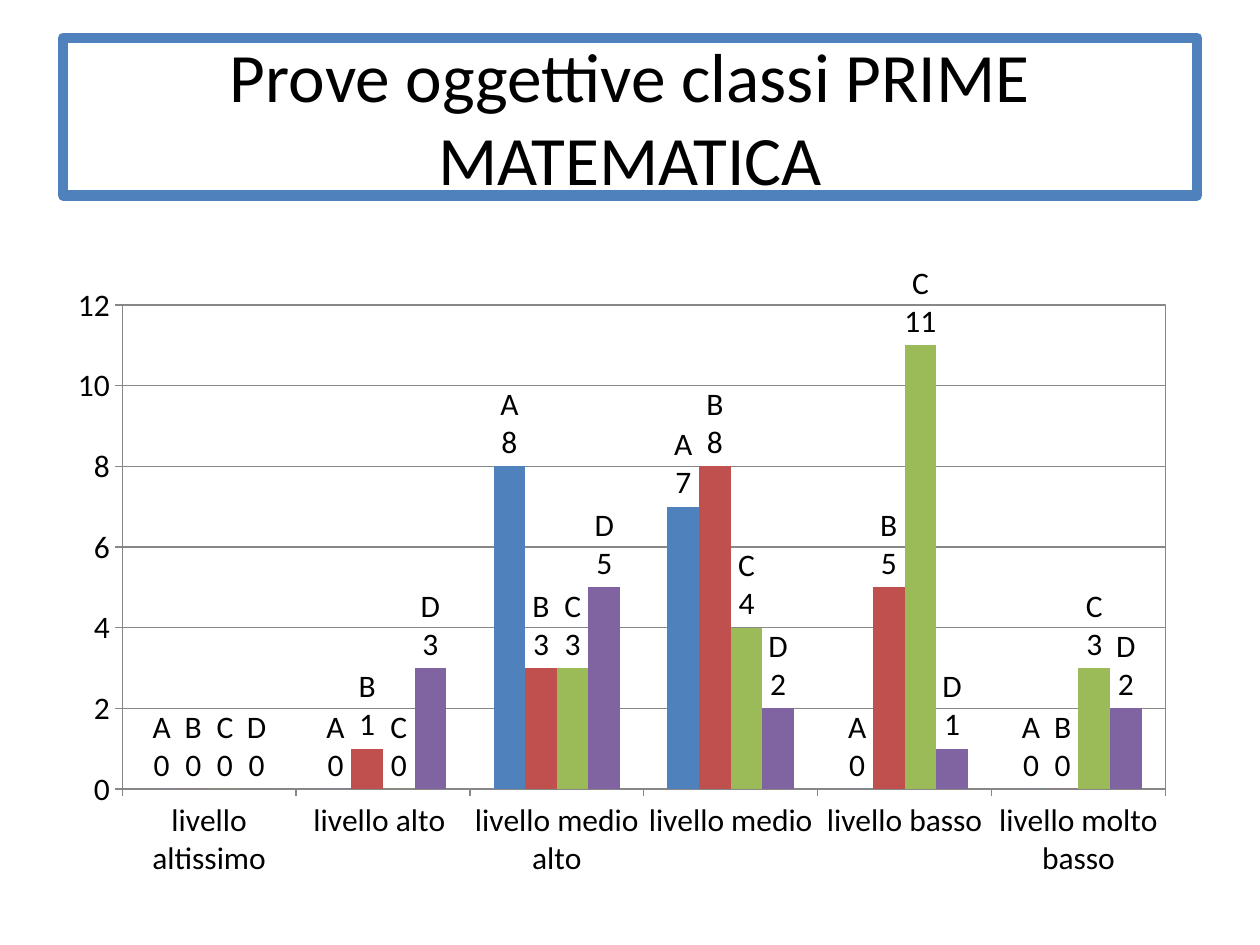
from lxml.etree import SubElement
from pptx import Presentation
from pptx.chart.data import CategoryChartData as ChartData
from pptx.dml.color import RGBColor as RGB
from pptx.enum.chart import XL_CHART_TYPE as ChartType, XL_LABEL_POSITION as LabelPos, XL_TICK_MARK as Tick
from pptx.enum.text import MSO_ANCHOR as Anchor, PP_ALIGN as Align
from pptx.oxml import parse_xml
from pptx.oxml.ns import nsdecls, qn
from pptx.util import Inches, Pt

HEADING = "Prove oggettive classi PRIME\vMATEMATICA"
LEVELS = ["livello altissimo", "livello alto ", "livello medio alto",
          "livello medio", "livello basso", "livello molto basso"]
CLASSES = {
    "A": (0, 0, 8, 7, 0, 0),
    "B": (0, 1, 3, 8, 5, 0),
    "C": (0, 0, 3, 4, 11, 3),
    "D": (0, 3, 5, 2, 1, 2),
}
THEME = {
    "font": "Calibri", "heading_size": 39.6, "chart_size": 18,
    "text": "000000", "frame": "4F81BD", "grid": "878787",
    "classes": ("4F81BD", "C0504D", "9BBB59", "8064A2"),
}
HEADING_BOX = (0.5, 0.3, 9, 1.25)
CHART_BOX = (0.43, 2.1, 9, 4.95)
PLOT_LAYOUT = {"x": 0.06, "y": 0.06, "w": 0.92, "h": 0.78}


def apply(target, values):
    for name, value in values.items():
        setattr(target, name, value)


def style_font(font, size):
    apply(font, {"name": THEME["font"], "size": Pt(size), "bold": False})
    font.color.rgb = RGB.from_string(THEME["text"])


def style_line(line, colour, width):
    line.color.rgb = RGB.from_string(colour)
    line.width = Pt(width)


def add_heading(slide):
    heading = slide.shapes.title
    apply(heading, dict(zip(("left", "top", "width", "height"), map(Inches, HEADING_BOX))))
    style_line(heading.line, THEME["frame"], 6)
    frame = heading.text_frame
    frame.text = HEADING
    apply(frame, {"word_wrap": True, "vertical_anchor": Anchor.MIDDLE})
    paragraph = frame.paragraphs[0]
    paragraph.alignment = Align.CENTER
    for run in paragraph.runs:
        style_font(run.font, THEME["heading_size"])


def frame_plot(chart):
    area = chart._chartSpace.chart.plotArea
    for layout in area.findall(qn("c:layout")):
        area.remove(layout)
    places = "".join(f'<c:{side} val="{share}"/>' for side, share in PLOT_LAYOUT.items())
    area.insert(0, parse_xml(
        f'<c:layout {nsdecls("c")}><c:manualLayout><c:layoutTarget val="inner"/>'
        f'<c:xMode val="edge"/><c:yMode val="edge"/>{places}</c:manualLayout></c:layout>'))
    area.append(parse_xml(
        f'<c:spPr {nsdecls("c", "a")}><a:noFill/><a:ln w="9525"><a:solidFill>'
        f'<a:srgbClr val="{THEME["grid"]}"/></a:solidFill></a:ln></c:spPr>'))


def add_results(slide):
    results = ChartData(number_format="General")
    results.categories = LEVELS
    for name, counts in CLASSES.items():
        results.add_series(name, counts)
    chart = slide.shapes.add_chart(
        ChartType.COLUMN_CLUSTERED, *map(Inches, CHART_BOX), results).chart
    apply(chart, {"has_legend": False, "has_title": False})
    style_font(chart.font, THEME["chart_size"])

    for axis in (chart.category_axis, chart.value_axis):
        apply(axis, {"major_tick_mark": Tick.OUTSIDE, "minor_tick_mark": Tick.NONE})
        style_line(axis.format.line, THEME["grid"], 0.75)
    apply(chart.value_axis, {"has_major_gridlines": True, "minimum_scale": 0,
                             "maximum_scale": 12, "major_unit": 2})
    style_line(chart.value_axis.major_gridlines.format.line, THEME["grid"], 0.75)

    plot = chart.plots[0]
    apply(plot, {"gap_width": 150, "overlap": 0, "vary_by_categories": False})
    for series, colour in zip(plot.series, THEME["classes"]):
        series.format.fill.solid()
        series.format.fill.fore_color.rgb = RGB.from_string(colour)
        labels = series.data_labels
        apply(labels, {"show_value": True, "show_series_name": True,
                       "position": LabelPos.OUTSIDE_END})
        style_font(labels.font, THEME["chart_size"])
        bubble = labels._element.find(qn("c:showBubbleSize"))
        separator = SubElement(labels._element, qn("c:separator"))
        separator.text = "\n"
        bubble.addnext(separator)
    frame_plot(chart)


def main():
    deck = Presentation()
    apply(deck, {"slide_width": Inches(10), "slide_height": Inches(7.5)})
    slide = deck.slides.add_slide(deck.slide_layouts[5])
    add_heading(slide)
    add_results(slide)
    deck.save("out.pptx")


if __name__ == "__main__":
    main()
